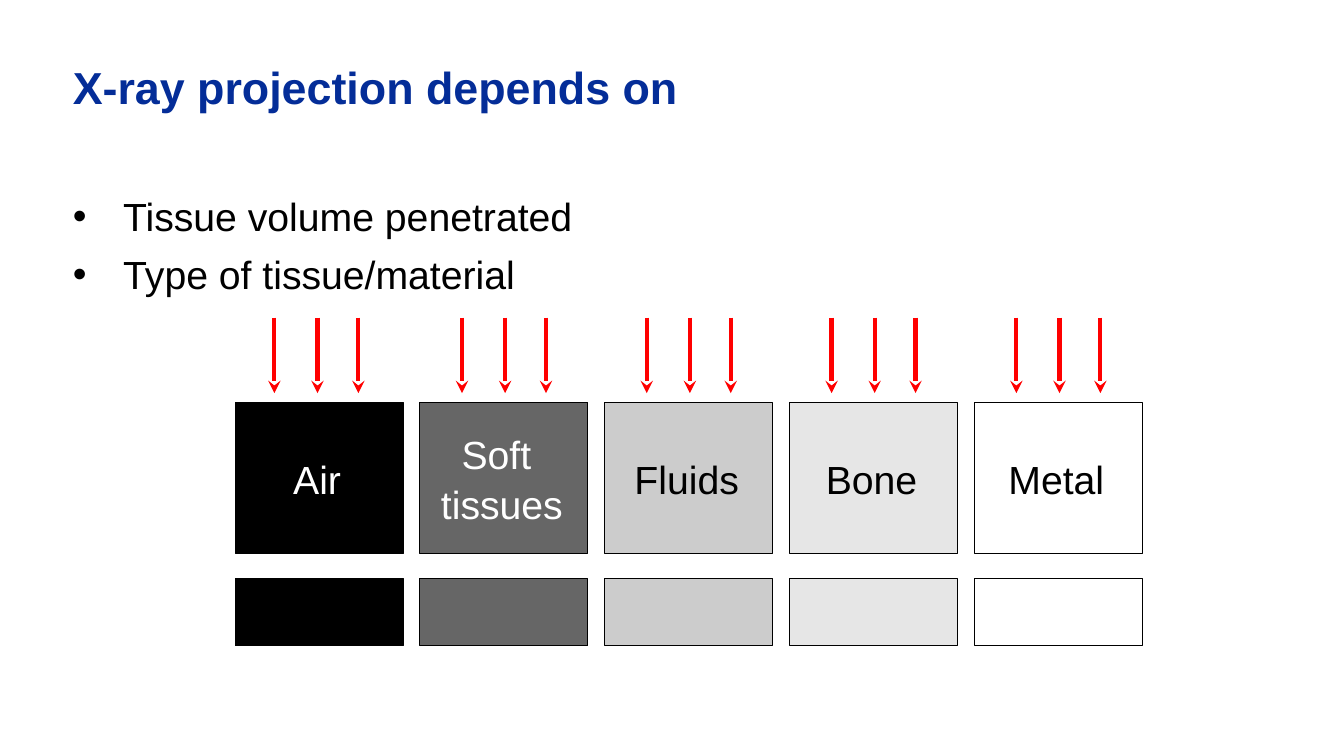
from dataclasses import dataclass

from lxml import etree
from pptx import Presentation
from pptx.dml.color import RGBColor
from pptx.enum.shapes import MSO_CONNECTOR, MSO_SHAPE
from pptx.enum.text import MSO_ANCHOR, MSO_AUTO_SIZE, PP_ALIGN
from pptx.oxml.ns import qn
from pptx.util import Pt

RECTANGLE = MSO_SHAPE.RECTANGLE
STRAIGHT = MSO_CONNECTOR.STRAIGHT
LEFT, CENTER = PP_ALIGN.LEFT, PP_ALIGN.CENTER
TOP, MIDDLE = MSO_ANCHOR.TOP, MSO_ANCHOR.MIDDLE
NO_AUTOFIT = MSO_AUTO_SIZE.NONE

FIRST_LEFT, PITCH, BOX_WIDTH = 168, 132, 120
MATERIAL_TOP, MATERIAL_HEIGHT = 287.3, 108
SHADE_TOP, SHADE_HEIGHT = 413.3, 48
RAY_TOP, RAY_BOTTOM = 226.8, 280.8
RAY_OFFSETS = (0, 30.8, 60)


@dataclass
class Material:
    label: str
    shade: str
    text_color: str
    first_ray: float


MATERIALS = [
    Material("Air", "000000", "FFFFFF", 196),
    Material("Soft \ntissues", "666666", "FFFFFF", 330),
    Material("Fluids", "CCCCCC", "000000", 462),
    Material("Bone", "E6E6E6", "000000", 594),
    Material("Metal", "FFFFFF", "000000", 726),
]


def paint(color_format, color: str) -> None:
    color_format.rgb = RGBColor.from_string(color)


def write(frame, text: str, size: float = 28, color: str = "000000",
          bold: bool = False, align=LEFT, anchor=TOP, wrap: bool = True,
          bullet: str = "", indent: float = 0, gap: float = 0) -> None:
    frame.auto_size = NO_AUTOFIT
    frame.word_wrap = wrap
    frame.vertical_anchor = anchor
    frame.margin_left = frame.margin_right = Pt(0)
    frame.margin_top = frame.margin_bottom = Pt(0)
    for index, line in enumerate(text.split("\n")):
        paragraph = frame.add_paragraph() if index else frame.paragraphs[0]
        if bullet:
            properties = paragraph._p.get_or_add_pPr()
            properties.set("marL", str(Pt(indent)))
            properties.set("indent", str(-Pt(indent)))
            etree.SubElement(properties, qn("a:buChar"), char=bullet)
        paragraph.alignment = align
        paragraph.line_spacing = 1.05
        paragraph.space_before = Pt(gap if index else 0)
        run = paragraph.add_run()
        run.text = line
        run.font.name = "Arial"
        run.font.size = Pt(size)
        run.font.bold = bold
        paint(run.font.color, color)


def place(shape, left: float, top: float, width: float, height: float) -> None:
    shape.left, shape.top = Pt(left), Pt(top)
    shape.width, shape.height = Pt(width), Pt(height)


def add_box(slide, left: float, top: float, height: float, shade: str):
    box = slide.shapes.add_shape(
        RECTANGLE, Pt(left), Pt(top), Pt(BOX_WIDTH), Pt(height))
    box.shadow.inherit = False
    box.fill.solid()
    paint(box.fill.fore_color, shade)
    paint(box.line.color, "000000")
    box.line.width = Pt(0.75)
    return box


def add_ray(slide, x: float) -> None:
    ray = slide.shapes.add_connector(
        STRAIGHT, Pt(x), Pt(RAY_TOP), Pt(x), Pt(RAY_BOTTOM))
    paint(ray.line.color, "FF0000")
    ray.line.width = Pt(3)
    etree.SubElement(ray.line._get_or_add_ln(), qn("a:tailEnd"), type="stealth")
    etree.SubElement(ray._element.spPr, qn("a:effectLst"))


def add_material(slide, left: float, material: Material) -> None:
    tissue = add_box(slide, left, MATERIAL_TOP, MATERIAL_HEIGHT, material.shade)
    write(tissue.text_frame, material.label, color=material.text_color,
          align=CENTER, anchor=MIDDLE, wrap=False)
    tissue.text_frame.margin_right = Pt(3)
    add_box(slide, left, SHADE_TOP, SHADE_HEIGHT, material.shade)
    for offset in RAY_OFFSETS:
        add_ray(slide, material.first_ray + offset)


def main() -> None:
    deck = Presentation()
    deck.slide_width, deck.slide_height = Pt(960), Pt(540)
    slide = deck.slides.add_slide(deck.slide_layouts[1])

    heading = slide.shapes.title
    place(heading, 52, 41, 856, 76)
    write(heading.text_frame, "X-ray projection depends on",
          size=32, color="042D98", bold=True)

    factors = slide.placeholders[1]
    place(factors, 52, 136, 749, 325)
    write(factors.text_frame, "Tissue volume penetrated\nType of tissue/material",
          bullet="•", indent=36, gap=6)

    for column, material in enumerate(MATERIALS):
        add_material(slide, FIRST_LEFT + column * PITCH, material)

    deck.save("out.pptx")


if __name__ == "__main__":
    main()
